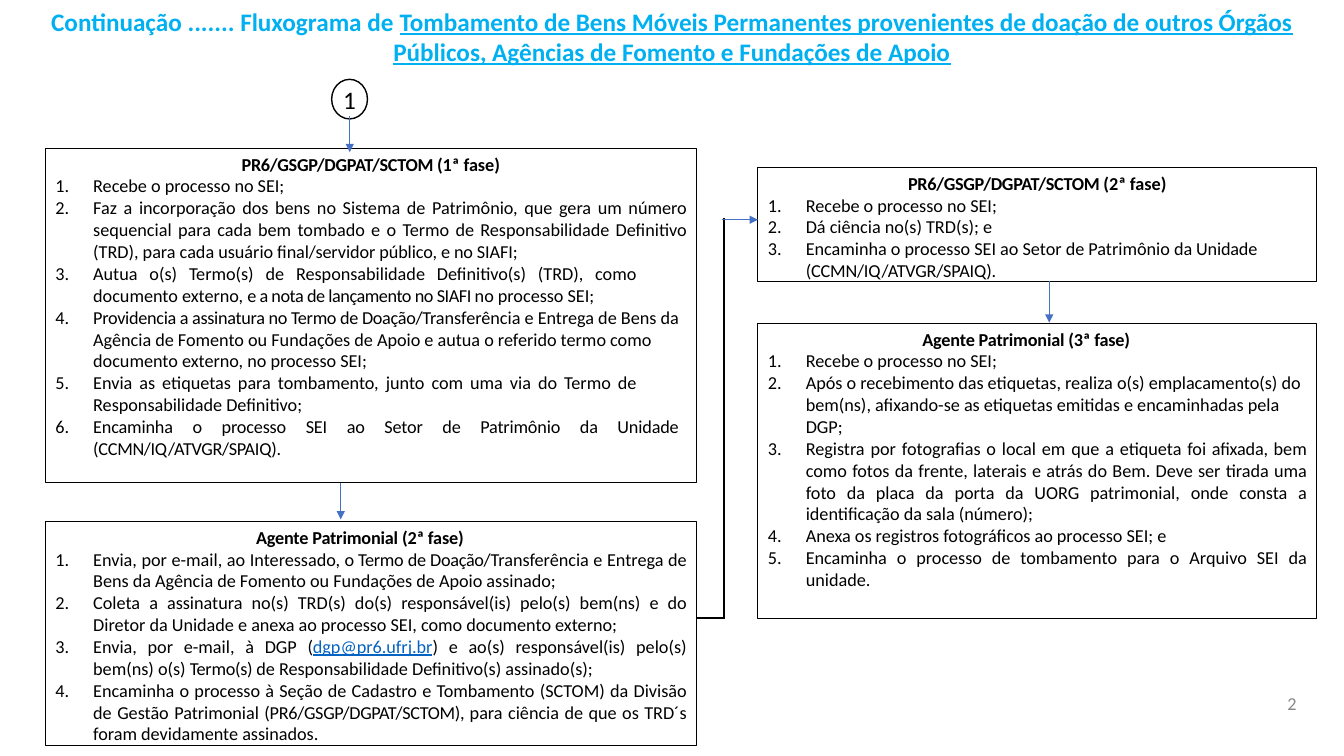
from lxml.etree import SubElement
from pptx import Presentation
from pptx.dml.color import RGBColor
from pptx.enum.shapes import MSO_CONNECTOR, MSO_SHAPE
from pptx.enum.text import MSO_ANCHOR, PP_ALIGN
from pptx.oxml.ns import qn
from pptx.util import Pt

theme = {
    "font": "Calibri",
    "ink": RGBColor(0x00, 0x00, 0x00),
    "title": RGBColor(0x00, 0xB0, 0xF0),
    "arrow": RGBColor(0x44, 0x71, 0xC4),
    "email": RGBColor(0x05, 0x63, 0xC1),
    "page": RGBColor(0x88, 0x88, 0x88),
    "title_size": Pt(18),
    "body_size": Pt(13),
}

LEFT, JUST, CENTER = PP_ALIGN.LEFT, PP_ALIGN.JUSTIFY, PP_ALIGN.CENTER


def add_run(paragraph, text, size, color, bold=False, underline=False, spacing=0):
    run = paragraph.add_run()
    run.text = text
    run.font.name = theme["font"]
    run.font.size = size
    run.font.color.rgb = color
    run.font.bold = bold
    run.font.underline = underline
    if spacing:
        run._r.get_or_add_rPr().set("spc", str(round(spacing * 100)))


def set_frame(shape, left=0, top=0, anchor=MSO_ANCHOR.TOP):
    frame = shape.text_frame
    frame.word_wrap = True
    frame.margin_left = frame.margin_right = Pt(left)
    frame.margin_top, frame.margin_bottom = Pt(top), 0
    frame.vertical_anchor = anchor
    return frame


prs = Presentation()
prs.slide_width, prs.slide_height = Pt(960), Pt(540)
slide = prs.slides.add_slide(prs.slide_layouts[6])

phases = [
    {
        "at": (32.4, 106, 465, 239),
        "heading": [("PR6/GSGP/DGPAT/SCTOM ", -0.2), ("(1ª fase)", 0)],
        "heading_indent": 0,
        "steps": [
            (JUST, 7, [("Recebe o processo no SEI;", 0)]),
            (JUST, 7, [("Faz a incorporação dos bens no Sistema de Patrimônio, que gera um ", 0),
                       ("número sequencial para cada bem tombado e o Termo de ", 0),
                       ("Responsabilidade Definitivo (TRD), para cada usuário ", 0),
                       ("final/servidor público, e no SIAFI;", -0.05)]),
            (JUST, 43, [("Autua o(s) Termo(s) de Responsabilidade Definitivo(s) (TRD), como ", 0),
                        ("documento externo, ", 0),
                        ("e a nota de lançamento no SIAFI ", -0.3),
                        ("no processo SEI;", 0)]),
            (LEFT, 7, [("Providencia a assinatura no Termo de Doação/", -0.2),
                       ("Transferência e Entrega de Bens da Agência de Fomento ou Fundações "
                        "de Apoio e autua o referido termo como documento externo, "
                        "no processo SEI;", 0)]),
            (JUST, 43, [("Envia as etiquetas para tombamento, junto com uma via do Termo de "
                         "Responsabilidade Definitivo;", 0)]),
            (JUST, 13, [("Encaminha o processo SEI ao Setor de Patrimônio da Unidade ", -0.1),
                        ("(CCMN/IQ/ATVGR/SPAIQ).", -0.2)]),
        ],
    },
    {
        "at": (32.4, 372.5, 465, 160),
        "heading": [("Agente Patrimonial (2ª fase)", -0.1)],
        "heading_indent": 150.5,
        "steps": [
            (JUST, 7, [("Envia, por e-mail, ao Interessado, ", 0),
                       ("o Termo de Doação/", -0.2),
                       ("Transferência e Entrega de Bens da Agência de Fomento ou "
                        "Fundações de Apoio assinado;", 0)]),
            (JUST, 7, [("Coleta a assinatura no(s) TRD(s) do(s) responsável(is) pelo(s) "
                        "bem(ns) e do Diretor da Unidade e anexa ao processo SEI, "
                        "como documento externo;", 0)]),
            (JUST, 7, [("Envia, por e-mail, à DGP (", 0),
                       ("dgp@pr6.ufrj.br", 0),
                       (") e ao(s) responsável(is) pelo(s) bem(ns) o(s) ", 0),
                       ("Termo(s) ", -0.2),
                       ("de Responsabilidade Definitivo(s) assinado(s);", 0)]),
            (JUST, 7, [("Encaminha o processo à Seção de Cadastro e Tombamento (SCTOM) da "
                        "Divisão de Gestão Patrimonial ", 0),
                       ("(PR6/GSGP/DGPAT/SCTOM), ", -0.2),
                       ("para ciência de que os TRD´s foram devidamente assinados.", 0)]),
        ],
    },
    {
        "at": (541.4, 119.7, 399, 81.3),
        "heading": [("PR6/GSGP/DGPAT/SCTOM ", -0.2), ("(2ª fase)", 0)],
        "heading_indent": 0,
        "steps": [
            (LEFT, 7, [("Recebe o processo no SEI;", 0)]),
            (LEFT, 7, [("Dá ciência no(s) TRD(s); e", 0)]),
            (LEFT, 7, [("Encaminha o processo SEI ao Setor de Patrimônio da ", 0),
                       ("Unidade (CCMN/IQ/ATVGR/SPAIQ).", -0.1)]),
        ],
    },
    {
        "at": (541.4, 231, 399, 211),
        "heading": [("Agente Patrimonial (3ª fase)", -0.1)],
        "heading_indent": 117.5,
        "steps": [
            (LEFT, 7, [("Recebe o processo no SEI;", 0)]),
            (LEFT, 7, [("Após o recebimento das etiquetas, realiza o(s) emplacamento(s) do "
                        "bem(ns), afixando-se as etiquetas emitidas e encaminhadas pela DGP;", 0)]),
            (JUST, 7, [("Registra por fotografias o local em que a etiqueta foi ", 0),
                       ("afixada, ", -0.1),
                       ("bem como fotos da frente, laterais e atrás do Bem. Deve ser tirada "
                        "uma foto da placa da porta da UORG patrimonial, onde consta a "
                        "identificação da sala (número);", 0)]),
            (JUST, 7, [("Anexa os registros fotográficos ao processo SEI; e", 0)]),
            (JUST, 7, [("Encaminha o processo de tombamento para o Arquivo SEI da unidade.", 0)]),
        ],
    },
]

for phase in phases:
    box = slide.shapes.add_shape(MSO_SHAPE.RECTANGLE, *map(Pt, phase["at"]))
    box.shadow.inherit = False
    box.fill.background()
    box.line.color.rgb = theme["ink"]
    box.line.width = Pt(0.75)
    frame = set_frame(box, top=3.2)

    heading = frame.paragraphs[0]
    heading.alignment = LEFT if phase["heading_indent"] else CENTER
    heading._p.get_or_add_pPr().set("marL", str(Pt(phase["heading_indent"])))
    for text, spacing in phase["heading"]:
        add_run(heading, text, theme["body_size"], theme["ink"], bold=True, spacing=spacing)

    for alignment, right_indent, runs in phase["steps"]:
        step = frame.add_paragraph()
        step.alignment = alignment
        props = step._p.get_or_add_pPr()
        props.set("marL", str(Pt(34.2)))
        props.set("marR", str(Pt(right_indent)))
        props.set("indent", str(Pt(-27)))
        SubElement(props, qn("a:buFont"), typeface=theme["font"])
        SubElement(props, qn("a:buAutoNum"), type="arabicPeriod")
        for text, spacing in runs:
            is_email = "@" in text
            add_run(step, text, theme["body_size"], theme["email" if is_email else "ink"],
                    underline=is_email, spacing=spacing)

start = slide.shapes.add_shape(MSO_SHAPE.OVAL, Pt(236.9), Pt(56.7), Pt(25.6), Pt(28.3))
start.shadow.inherit = False
start.fill.background()
start.line.color.rgb = theme["ink"]
start.line.width = Pt(1)
start_mark = set_frame(start, anchor=MSO_ANCHOR.MIDDLE).paragraphs[0]
start_mark.alignment = CENTER
add_run(start_mark, "1", theme["title_size"], theme["ink"])

flows = [
    ((249.8, 83), (249.8, 108.7), "arrow"),
    ((243.4, 345), (243.4, 371), "arrow"),
    ((749.5, 201), (749.5, 230.5), "arrow"),
    ((497.4, 441.6), (517.2, 441.6), "ink"),
    ((517.2, 442.3), (517.2, 155.7), "ink"),
    ((515.8, 157), (541.4, 157), "arrow"),
]
for begin, end, color in flows:
    flow = slide.shapes.add_connector(MSO_CONNECTOR.STRAIGHT, *map(Pt, begin + end))
    flow.line.color.rgb = theme[color]
    flow.line.width = Pt(1 if color == "arrow" else 1.5)
    if color == "arrow":
        SubElement(flow.line._get_or_add_ln(), qn("a:tailEnd"), type="triangle")
    SubElement(flow._element.spPr, qn("a:effectLst"))

title_box = slide.shapes.add_textbox(0, Pt(0.7), Pt(960), Pt(51))
title = set_frame(title_box, left=7.2, top=3.6).paragraphs[0]
title.alignment = CENTER
add_run(title, "Continuação ....... Fluxograma de ", theme["title_size"], theme["title"], bold=True)
add_run(title, "Tombamento de Bens Móveis Permanentes provenientes de doação de outros Órgãos "
        "Públicos, Agências de Fomento e Fundações de Apoio",
        theme["title_size"], theme["title"], bold=True, underline=True)

page_box = slide.shapes.add_textbox(Pt(919.5), Pt(493.2), Pt(9.4), Pt(16.6))
page = set_frame(page_box, top=1).paragraphs[0]
add_run(page, "2", theme["body_size"], theme["page"])

prs.save("out.pptx")
